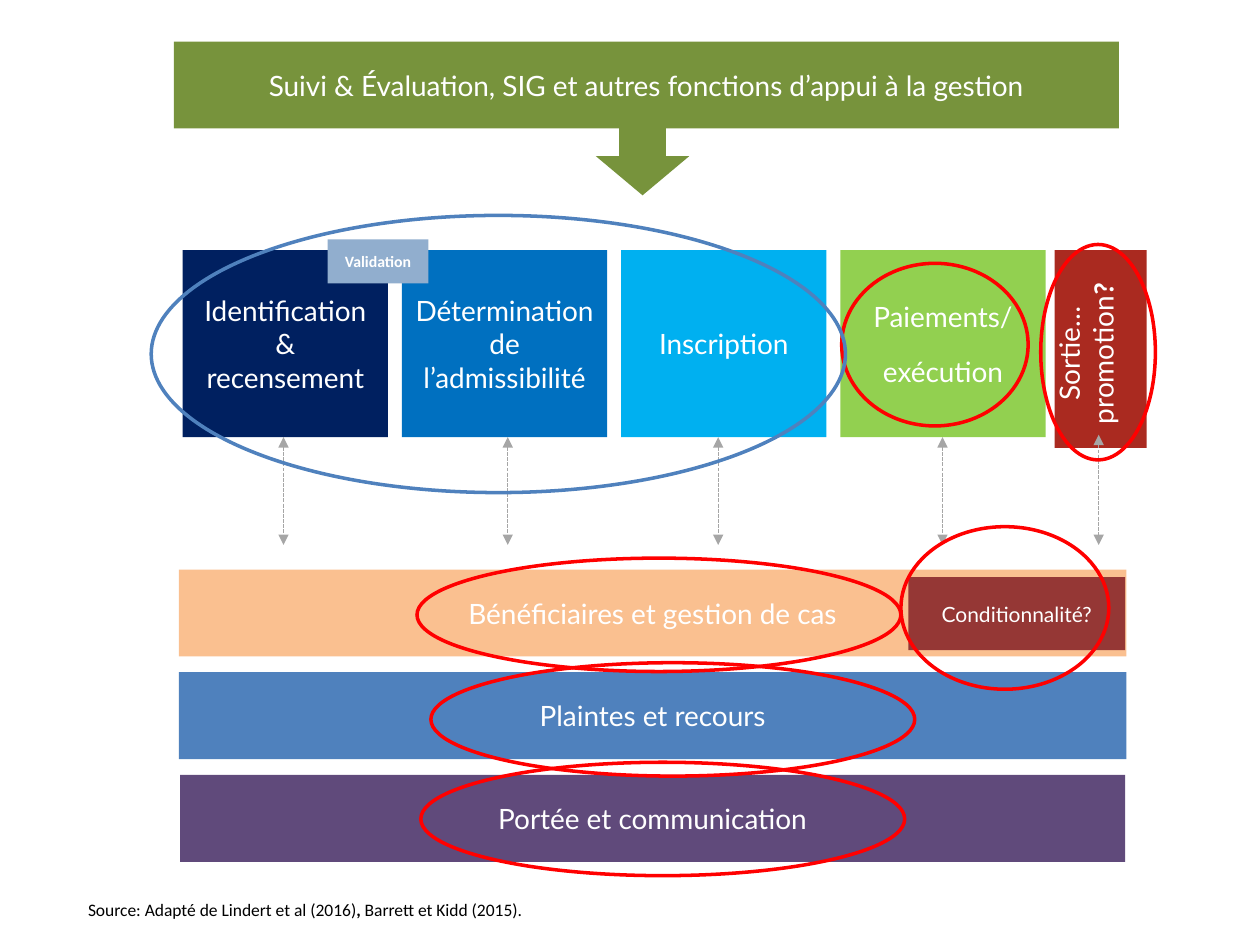
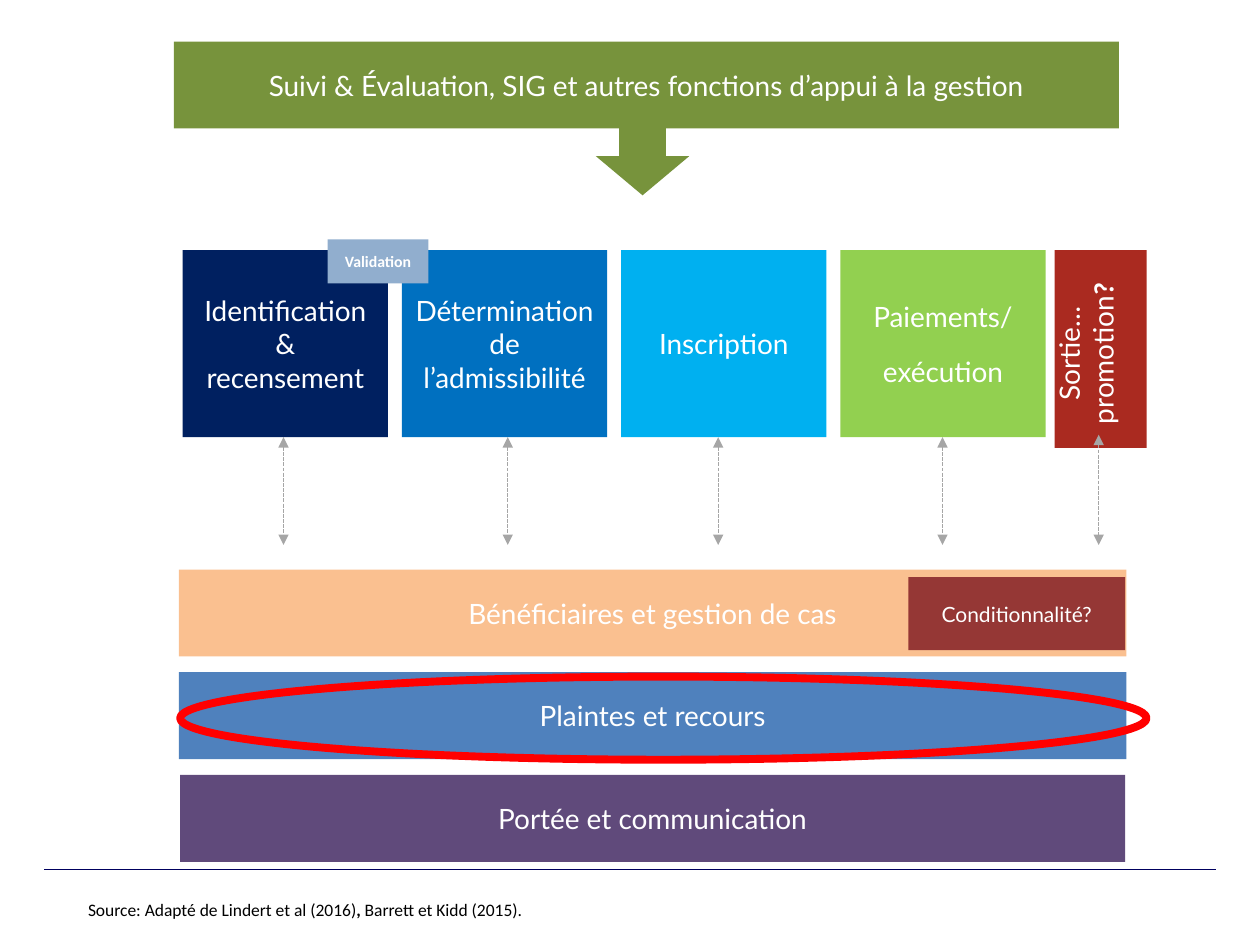
from collections import namedtuple

from lxml import etree
from pptx import Presentation
from pptx.dml.color import RGBColor
from pptx.enum.dml import MSO_LINE
from pptx.enum.shapes import MSO_CONNECTOR, MSO_SHAPE
from pptx.enum.text import MSO_ANCHOR, MSO_AUTO_SIZE, PP_ALIGN
from pptx.oxml.ns import qn
from pptx.util import Inches, Pt

RECTANGLE, ELLIPSE, DOWN_ARROW = MSO_SHAPE.RECTANGLE, MSO_SHAPE.OVAL, MSO_SHAPE.DOWN_ARROW
STRAIGHT = MSO_CONNECTOR.STRAIGHT
CENTER, LEFT = PP_ALIGN.CENTER, PP_ALIGN.LEFT
MIDDLE, TOP = MSO_ANCHOR.MIDDLE, MSO_ANCHOR.TOP
GROW = MSO_AUTO_SIZE.SHAPE_TO_FIT_TEXT
DASHED = MSO_LINE.SQUARE_DOT

COLORS = {
    "white": "FFFFFF", "black": "000000", "grey": "A6A6A6", "rule": "00005E",
    "navy": "002060", "blue": "0070C0", "sky": "00B0F0", "lime": "92D050",
    "brick": "AA2A20", "olive": "77933C", "peach": "FAC090", "steel": "4F81BD",
    "violet": "604A7B", "wine": "953735", "mist": "91AECE", "red": "FF0000",
}
BODY_FONT, NOTE_FONT = "Lato", "Calibri"

# The slide is a grid of 100 columns by 75 rows
COLUMNS, ROWS = 100, 75
WIDTH, HEIGHT = Inches(10), Inches(7.5)

Box = namedtuple("Box", "left top width height")
Span = namedtuple("Span", "text font bold", defaults=(BODY_FONT, False))

HEADER = Box(13.8, 3.3, 75, 12.2)
STEPS = Box(14.5, 19.85, 76.5, 23.4)
SUPPORT = Box(14.2, 45.2, 75.2, 23.2)
SOURCE = Box(6, 70.8, 37.1, 2.7)

BAND_HEIGHT, BAND_PITCH = 6.9, 8.15
STEP_WIDTH, STEP_HEIGHT, STEP_PITCH = 16.3, 14.85, 17.4
PILLARS = [
    ("navy", ["Identification & recensement"]),
    ("blue", ["Détermination de l’admissibilité"]),
    ("sky", ["Inscription"]),
    ("lime", ["Paiements/", "exécution"]),
]
BANDS = [
    ("peach", "Bénéficiaires et gestion de cas", 0),
    ("steel", "Plaintes et recours", 0),
    ("violet", "Portée et communication", 0.1),
]
# Column and top of each link, relative to the steps
LINKS = [(8, 14.85), (25.8, 14.85), (42.5, 14.85), (60.3, 14.85), (72.7, 14.65)]

RING_WIDTH, RING_HEIGHT = 38.4, 9
OVERVIEW_RINGS = [
    (Box(66.8, 20.9, 14.8, 12.9), "red"),
    (Box(82.6, 19.4, 9.1, 17.1), "red"),
    (Box(71.5, 41.8, 16.5, 12.9), "red"),
    (Box(33.1, 44.3, RING_WIDTH, RING_HEIGHT), "red"),
    (Box(34.2, 52.6, RING_WIDTH, RING_HEIGHT), "red"),
    (Box(33.4, 60.5, RING_WIDTH, RING_HEIGHT), "red"),
    (Box(12, 17.1, 55.1, 22), "steel"),
]
COMPLAINTS_RING = [(Box(14.3, 53.7, 76.7, 6.6), "red")]


def color(name):
    return RGBColor.from_string(COLORS[name])


def x(columns):
    return int(WIDTH * columns / COLUMNS)


def y(rows):
    return int(HEIGHT * rows / ROWS)


def within(region, left, top, width, height):
    """A box placed relative to the corner of its region."""
    return Box(region.left + left, region.top + top, width, height)


def place(box):
    return x(box.left), y(box.top), x(box.width), y(box.height)


def write(frame, paras, size, ink="white", align=CENTER, anchor=MIDDLE, after=12):
    frame.word_wrap = True
    frame.vertical_anchor = anchor
    for index, spans in enumerate(paras):
        para = frame.paragraphs[0] if index == 0 else frame.add_paragraph()
        para.alignment = align
        para.space_after = Pt(after)
        for span in spans:
            run = para.add_run()
            run.text = span.text
            run.font.name = span.font
            run.font.size = Pt(size)
            run.font.bold = span.bold
            run.font.color.rgb = color(ink)


def add_block(page, box, fill, paras=(), size=16, kind=RECTANGLE):
    shape = page.shapes.add_shape(kind, *place(box))
    shape.shadow.inherit = False
    shape.fill.solid()
    shape.fill.fore_color.rgb = color(fill)
    shape.line.fill.background()
    write(shape.text_frame, paras, size)
    return shape


def add_line(page, start, end, ink, weight):
    line = page.shapes.add_connector(STRAIGHT, x(start[0]), y(start[1]), x(end[0]), y(end[1]))
    line.line.color.rgb = color(ink)
    line.line.width = Pt(weight)
    etree.SubElement(line.element.spPr, qn("a:effectLst"))
    return line


def add_link(page, column, top, bottom):
    """Dashed line with an arrowhead at both ends."""
    link = add_line(page, (column, top), (column, bottom), "grey", 0.75)
    link.line.dash_style = DASHED
    outline = link.element.spPr.find(qn("a:ln"))
    for end in ("a:headEnd", "a:tailEnd"):
        etree.SubElement(outline, qn(end), type="triangle")


def add_rings(page, rings, weight):
    for box, ink in rings:
        ring = page.shapes.add_shape(ELLIPSE, *place(box))
        ring.shadow.inherit = False
        ring.fill.background()
        ring.line.color.rgb = color(ink)
        ring.line.width = Pt(weight)


def add_header(page, region):
    title = Span("Suivi & Évaluation, SIG et autres fonctions d’appui à la gestion")
    add_block(page, within(region, 0, 0, region.width, BAND_HEIGHT), "olive", [[title]])
    add_block(page, within(region, 33.5, 6, 7.4, 6.2), "olive", kind=DOWN_ARROW)


def add_steps(page, region):
    # Exit step, links, then the four pillars
    add_block(page, within(region, 69.2, 0, 7.3, 15.7), "brick")
    for column, top in LINKS:
        add_link(page, region.left + column, region.top + top, region.top + region.height)
    for index, (fill, lines) in enumerate(PILLARS):
        box = within(region, index * STEP_PITCH, 0, STEP_WIDTH, STEP_HEIGHT)
        add_block(page, box, fill, [[Span(line)] for line in lines])

    # Upward label of the exit step
    label = page.shapes.add_textbox(*place(within(region, 68.5, 0.25, 8, 15.9)))
    spans = [Span("Sortie… promotion"), Span("?", NOTE_FONT, True)]
    write(label.text_frame, [spans], 16, anchor=TOP, after=0)
    label.element.txBody.find(qn("a:bodyPr")).set("vert", "vert270")

    # Tag between the first two pillars
    tag = Span("Validation", NOTE_FONT, True)
    add_block(page, within(region, 11.5, -0.85, 8, 3.5), "mist", [[tag]], 9)


def add_support(page, region):
    for index, (fill, text, inset) in enumerate(BANDS):
        box = within(region, inset, index * BAND_PITCH, region.width - 2 * inset, BAND_HEIGHT)
        add_block(page, box, fill, [[Span(text)]])
    condition = within(region, 57.9, 0.6, 17.2, 5.8)
    add_block(page, condition, "wine", [[Span("Conditionnalité?")]], 12)


def add_source(page, box):
    note = page.shapes.add_textbox(*place(box))
    spans = [
        Span("Source: Adapté de Lindert et al (2016)", NOTE_FONT),
        Span(",", NOTE_FONT, True),
        Span(" Barrett et Kidd (2015).", NOTE_FONT),
    ]
    write(note.text_frame, [spans], 10, "black", LEFT, after=0)
    note.text_frame.word_wrap = False
    note.text_frame.auto_size = GROW


def add_delivery_chain(deck, rings, weight, ruled=False):
    page = deck.slides.add_slide(deck.slide_layouts[6])
    if ruled:
        add_line(page, (3.5, 69), (96.5, 69), "rule", 1)
    add_header(page, HEADER)
    add_steps(page, STEPS)
    add_support(page, SUPPORT)
    add_source(page, SOURCE)
    add_rings(page, rings, weight)


def main():
    deck = Presentation()
    deck.slide_width, deck.slide_height = WIDTH, HEIGHT
    add_delivery_chain(deck, OVERVIEW_RINGS, 2)
    add_delivery_chain(deck, COMPLAINTS_RING, 4.5, ruled=True)
    deck.save("out.pptx")


if __name__ == "__main__":
    main()
